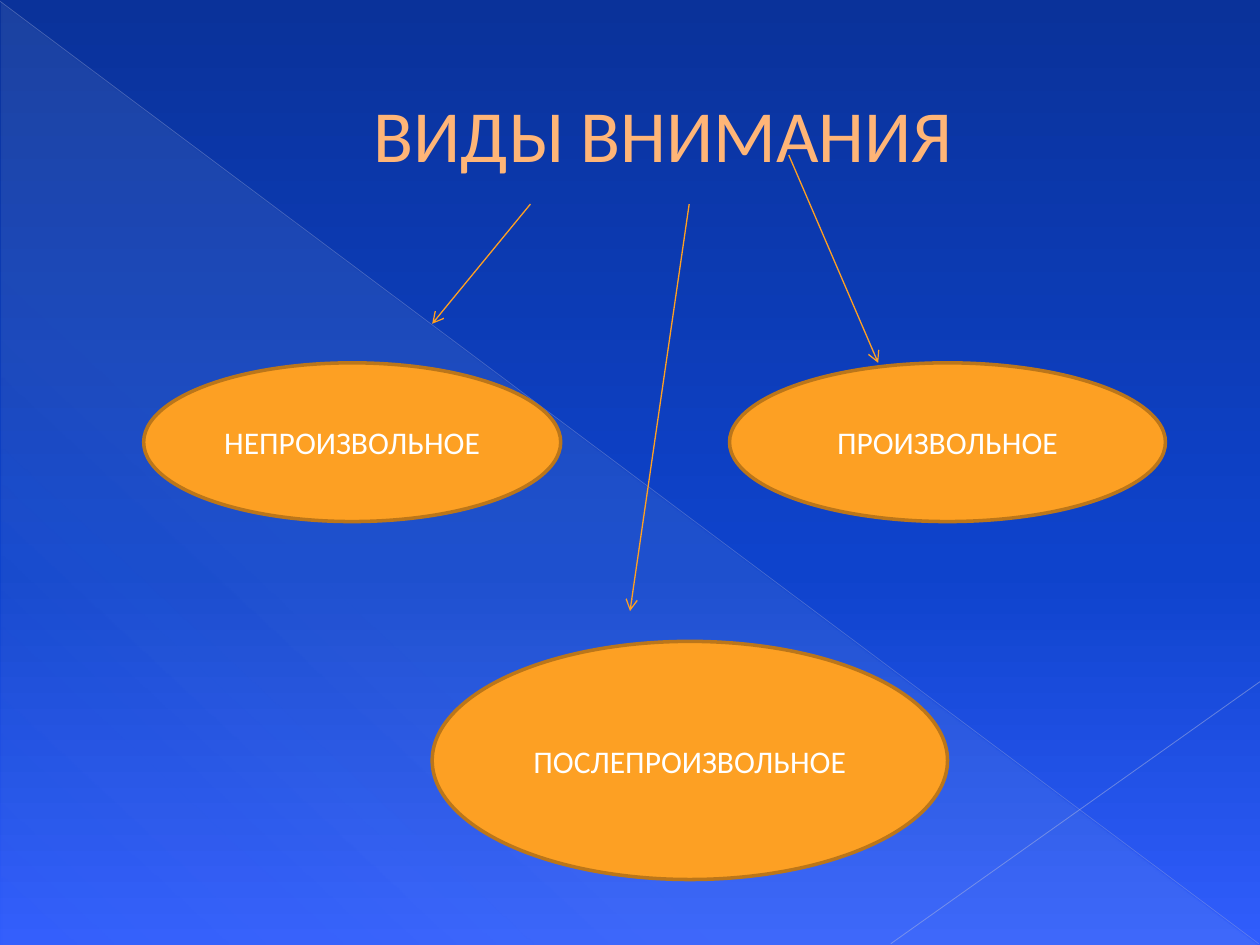
from lxml import etree
from pptx import Presentation
from pptx import util as u
from pptx.dml.color import RGBColor
from pptx.enum import shapes, text
from pptx.oxml import parse_xml
from pptx.oxml.ns import qn, nsdecls

WIDE, HIGH = 10, 7.5
FONT = "Calibri"
OVALS = [
    ("НЕПРОИЗВОЛЬНОЕ", 1.14, 2.88, 3.31, 1.26),
    ("ПРОИЗВОЛЬНОЕ", 5.79, 2.88, 3.46, 1.26),
    ("ПОСЛЕПРОИЗВОЛЬНОЕ", 3.43, 5.09, 4.09, 1.89),
]
ARROWS = [
    ((4.21, 1.62), (3.43, 2.57)),
    ((6.26, 1.23), (6.97, 2.88)),
    ((5.47, 1.62), (5, 4.85)),
]


def rgb(code):
    """Turn a hex string into a colour."""
    return RGBColor.from_string(code)


def inches(*sizes):
    """Turn numbers into lengths."""
    return [u.Inches(size) for size in sizes]


def shade(fill, owner, stops, angle):
    """Fill an element with a gradient of (place, colour, opacity) stops."""
    fill.solid()
    marks = "".join(
        f'<a:gs pos="{place * 1000}"><a:srgbClr val="{code}">'
        f'<a:alpha val="{alpha * 1000}"/></a:srgbClr></a:gs>'
        for place, code, alpha in stops
    )
    grad = parse_xml(
        f'<a:gradFill {nsdecls("a")} rotWithShape="1"><a:gsLst>{marks}</a:gsLst>'
        f'<a:lin ang="{angle * 60000}" scaled="0"/></a:gradFill>'
    )
    old = owner.find(qn("a:solidFill"))
    owner.replace(old, grad)


def write(frame, words, size, code):
    """Write one centred line in the middle of a frame."""
    frame.word_wrap = True
    frame.vertical_anchor = text.MSO_ANCHOR.MIDDLE
    para = frame.paragraphs[0]
    para.alignment = text.PP_ALIGN.CENTER
    run = para.add_run()
    run.text = words
    run.font.size = u.Pt(size)
    run.font.name = FONT
    run.font.color.rgb = rgb(code)
    return para, run


def line(slide, start, end, code, width, alpha=100, arrow=False):
    """Draw a straight line, with an open arrowhead if asked."""
    link = slide.shapes.add_connector(
        shapes.MSO_CONNECTOR.STRAIGHT, *inches(*start, *end)
    )
    link.line.color.rgb = rgb(code)
    link.line.width = u.Pt(width)
    props = link.element.spPr
    etree.SubElement(props, qn("a:effectLst"))
    stroke = props.find(qn("a:ln"))
    if alpha < 100:
        tint = stroke.find(f".//{qn('a:srgbClr')}")
        etree.SubElement(tint, qn("a:alpha"), val=str(alpha * 1000))
    if arrow:
        etree.SubElement(stroke, qn("a:tailEnd"), type="arrow")


def oval(slide, words, *box):
    """Draw a labelled oval."""
    shape = slide.shapes.add_shape(shapes.MSO_SHAPE.OVAL, *inches(*box))
    shape.shadow.inherit = False
    shape.fill.solid()
    shape.fill.fore_color.rgb = rgb("FDA023")
    shape.line.color.rgb = rgb("BB761A")
    shape.line.width = u.Pt(2)
    write(shape.text_frame, words, 18, "FFFFFF")


def backdrop(slide):
    """Lay the blue gradient, the pale corner and the two thin lines."""
    fill = slide.background.fill
    fill.solid()
    shade(
        fill,
        slide.element.find(f".//{qn('p:bgPr')}"),
        [(0, "0A329A", 100), (60, "0E43CC", 100), (100, "315DFC", 100)],
        90,
    )
    corner = slide.shapes.add_shape(
        shapes.MSO_SHAPE.RIGHT_TRIANGLE, *inches(0.01, 0.02, 9.98, 7.48)
    )
    corner.shadow.inherit = False
    corner.line.fill.background()
    stops = [(0, "CCDDEA", 10), (70, "CCDDEA", 8), (100, "CCDDEA", 1)]
    shade(corner.fill, corner.element.spPr, stops, 133)
    line(slide, (0, 0.01), (9.99, 7.49), "ADB6DC", 0.39, 35)
    line(slide, (WIDE, 5.41), (7.07, 7.49), "B7BEDF", 0.47, 45)


def heading(slide, words):
    """Place the outlined title above the backdrop."""
    title = slide.shapes.title
    title.left, title.top, title.width, title.height = inches(0.5, 0.29, 9, 1.53)
    para, run = write(title.text_frame, words, 42, "FFB577")
    props = para._p.get_or_add_pPr()
    props.set("marL", str(u.Inches(0.53)))
    props.set("indent", "0")
    edge = parse_xml(
        f'<a:ln {nsdecls("a")} w="{u.Pt(0.5)}"><a:solidFill>'
        '<a:srgbClr val="AF6F18"/></a:solidFill></a:ln>'
    )
    run.font._element.insert(0, edge)
    slide.shapes.element.append(title.element)


def main():
    """Build the slide and save it."""
    deck = Presentation()
    deck.slide_width, deck.slide_height = inches(WIDE, HIGH)
    slide = deck.slides.add_slide(deck.slide_layouts[5])
    backdrop(slide)
    heading(slide, "ВИДЫ ВНИМАНИЯ")
    for item in OVALS:
        oval(slide, *item)
    for start, end in ARROWS:
        line(slide, start, end, "FFA021", 0.75, arrow=True)
    deck.save("out.pptx")


if __name__ == "__main__":
    main()
